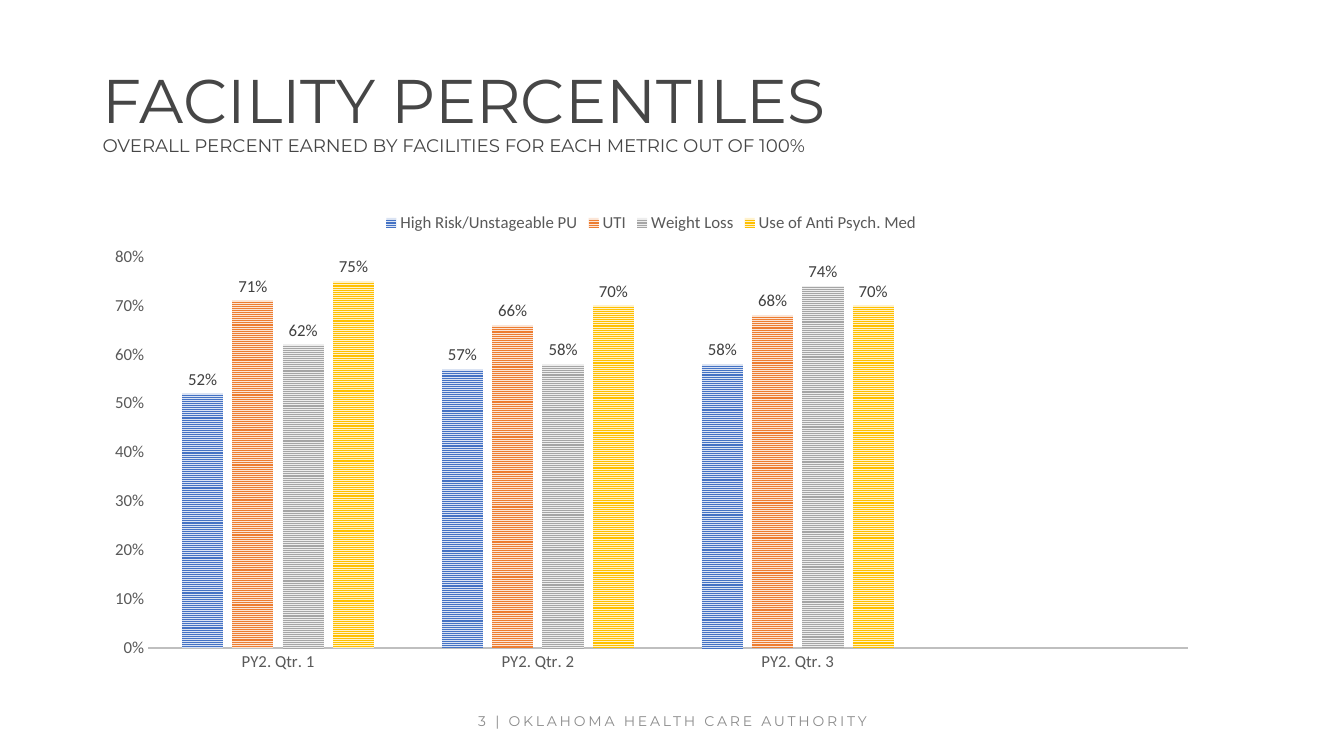
from dataclasses import dataclass

from pptx import Presentation
from pptx.chart.data import CategoryChartData
from pptx.dml.color import RGBColor
from pptx.enum.chart import XL_CHART_TYPE, XL_LABEL_POSITION, XL_LEGEND_POSITION, XL_TICK_MARK
from pptx.enum.dml import MSO_PATTERN
from pptx.enum.text import MSO_ANCHOR, PP_ALIGN
from pptx.util import Inches, Pt

COLUMNS = XL_CHART_TYPE.COLUMN_CLUSTERED
ABOVE_COLUMN = XL_LABEL_POSITION.OUTSIDE_END
LEGEND_TOP = XL_LEGEND_POSITION.TOP
NO_TICK = XL_TICK_MARK.NONE
STRIPES = MSO_PATTERN.NARROW_HORIZONTAL
MIDDLE = MSO_ANCHOR.MIDDLE
CENTER = PP_ALIGN.CENTER

HEADING_FONT = "Montserrat"
CHART_FONT = "Calibri"
TITLE_COLOR = "464646"
FOOTER_COLOR = "8C8C8C"
AXIS_TEXT = "595959"
AXIS_LINE = "BFBFBF"
LABEL_TEXT = "404040"
PERCENT = "0%"
LEFT, TEXT_WIDTH = 0.92, 11.5


@dataclass
class Metric:
    name: str
    values: tuple
    stripe: str
    background: str


# The last category is blank and keeps the space at the right of the chart.
CATEGORIES = ("PY2. Qtr. 1", "PY2. Qtr. 2", "PY2. Qtr. 3", "")
METRICS = (
    Metric("High Risk/Unstageable PU", (0.52, 0.57, 0.58, None), "4472C4", "DAE3F3"),
    Metric("UTI", (0.71, 0.66, 0.68, None), "ED7D31", "FBE5D6"),
    Metric("Weight Loss", (0.62, 0.58, 0.74, None), "A5A5A5", "EDEDED"),
    Metric("Use of Anti Psych. Med", (0.75, 0.7, 0.7, None), "FFC000", "FFF2CC"),
)


def color(value: str) -> RGBColor:
    return RGBColor.from_string(value)


def style_font(font, name: str, size: float, text_color: str) -> None:
    font.name = name
    font.size = Pt(size)
    font.color.rgb = color(text_color)


def add_text_box(slide, top: float, height: float):
    """Add a wrapping, vertically centred box and return its first paragraph."""
    box = slide.shapes.add_textbox(
        Inches(LEFT), Inches(top), Inches(TEXT_WIDTH), Inches(height))
    box.text_frame.word_wrap = True
    box.text_frame.vertical_anchor = MIDDLE
    return box.text_frame.paragraphs[0]


def add_run(paragraph, text: str, size: float, text_color: str):
    run = paragraph.add_run()
    run.text = text
    style_font(run.font, HEADING_FONT, size, text_color)
    return run


def add_title(slide) -> None:
    paragraph = add_text_box(slide, 0.4, 1.45)
    paragraph.line_spacing = 0.9
    add_run(paragraph, "FACILITY PERCENTILES", 44, TITLE_COLOR)
    paragraph.add_line_break()
    add_run(paragraph, "OVERALL PERCENT EARNED BY FACILITIES FOR EACH METRIC OUT OF 100%",
            13, TITLE_COLOR)


def add_footer(slide) -> None:
    paragraph = add_text_box(slide, 6.95, 0.4)
    paragraph.alignment = CENTER
    run = add_run(paragraph, "3 | OKLAHOMA HEALTH CARE AUTHORITY", 10, FOOTER_COLOR)
    run.font._element.set("spc", "200")


def style_axes(chart) -> None:
    for axis in (chart.category_axis, chart.value_axis):
        axis.major_tick_mark = axis.minor_tick_mark = NO_TICK
        axis.has_major_gridlines = False
        style_font(axis.tick_labels.font, CHART_FONT, 12, AXIS_TEXT)
    category_line = chart.category_axis.format.line
    category_line.color.rgb = color(AXIS_LINE)
    category_line.width = Pt(1.5)
    value_axis = chart.value_axis
    value_axis.format.line.fill.background()
    value_axis.minimum_scale, value_axis.maximum_scale = 0, 0.8
    value_axis.major_unit = 0.1
    value_axis.tick_labels.number_format = PERCENT
    value_axis.tick_labels.number_format_is_linked = False


def style_series(series, metric: Metric) -> None:
    fill = series.format.fill
    fill.patterned()
    fill.pattern = STRIPES
    fill.fore_color.rgb = color(metric.stripe)
    fill.back_color.rgb = color(metric.background)
    series.invert_if_negative = False
    labels = series.data_labels
    labels.show_value = True
    labels.position = ABOVE_COLUMN
    labels.number_format = PERCENT
    labels.number_format_is_linked = False
    style_font(labels.font, CHART_FONT, 12, LABEL_TEXT)


def add_percentile_chart(slide) -> None:
    data = CategoryChartData(number_format=PERCENT)
    data.categories = CATEGORIES
    for metric in METRICS:
        data.add_series(metric.name, metric.values)
    chart = slide.shapes.add_chart(
        COLUMNS, Inches(LEFT), Inches(2), Inches(11.08), Inches(4.76), data).chart
    style_font(chart.font, CHART_FONT, 10, "000000")
    chart.has_title = False
    chart.has_legend = True
    chart.legend.position = LEGEND_TOP
    chart.legend.include_in_layout = False
    style_font(chart.legend.font, CHART_FONT, 12, AXIS_TEXT)
    style_axes(chart)
    plot = chart.plots[0]
    plot.gap_width, plot.overlap = 164, -22
    plot.vary_by_categories = False
    for series, metric in zip(plot.series, METRICS):
        style_series(series, metric)


def main() -> None:
    presentation = Presentation()
    presentation.slide_width = Inches(13.33)
    presentation.slide_height = Inches(7.5)
    slide = presentation.slides.add_slide(presentation.slide_layouts[6])
    add_footer(slide)
    add_title(slide)
    add_percentile_chart(slide)
    presentation.save("out.pptx")


if __name__ == "__main__":
    main()
